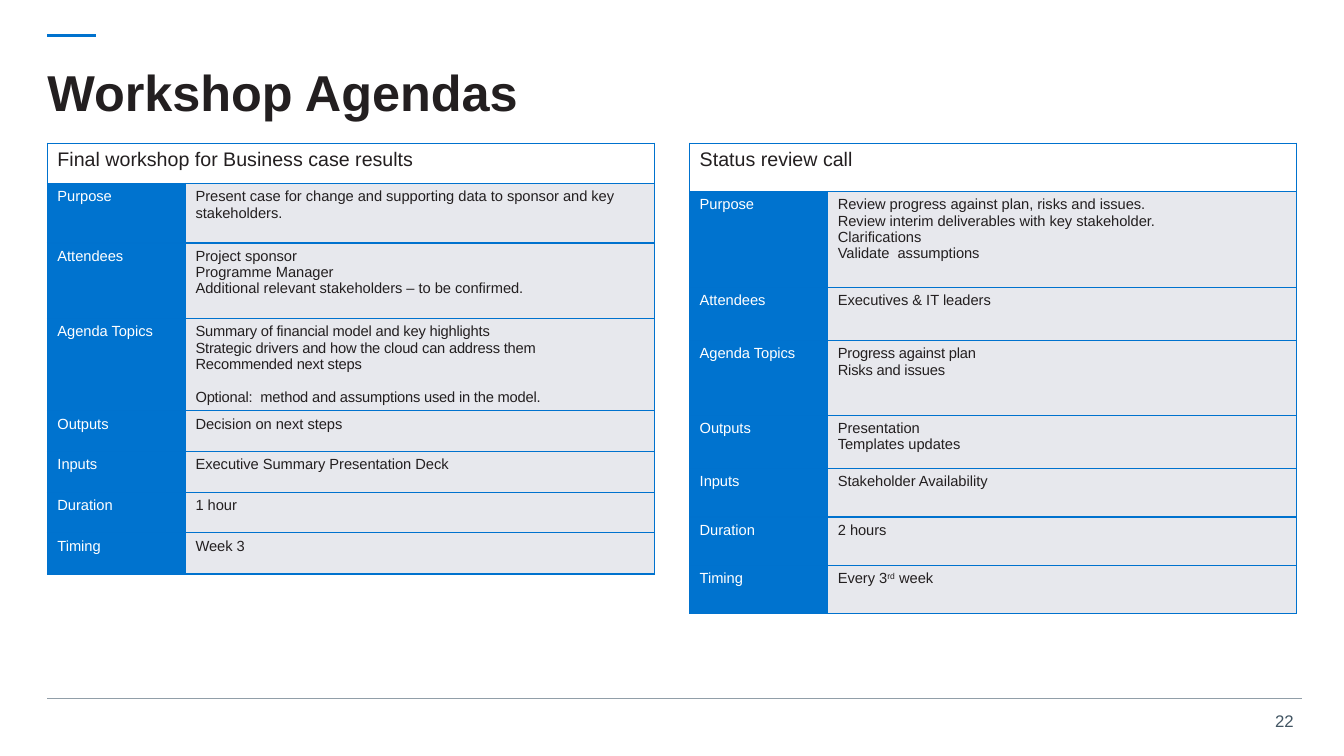
from lxml.etree import SubElement
from pptx import Presentation
from pptx.dml.color import RGBColor
from pptx.enum.shapes import MSO_CONNECTOR
from pptx.enum.text import MSO_ANCHOR, PP_ALIGN
from pptx.oxml import parse_xml
from pptx.oxml.ns import nsdecls, qn
from pptx.util import Inches, Pt

# Content: an empty line opens a gap, ^ encloses superscript
TITLE = "Workshop Agendas"
PAGE_NUMBER = "22"
TOPICS = ["Purpose", "Attendees", "Agenda Topics", "Outputs", "Inputs", "Duration", "Timing"]
AGENDAS = [
    {
        "heading": "Final workshop for Business case results",
        "details": [
            ["Present case for change and supporting data to sponsor and key stakeholders."],
            ["Project sponsor", "Programme Manager",
             "Additional relevant stakeholders – to be confirmed."],
            ["Summary of financial model and key highlights",
             "Strategic drivers and how the cloud can address them",
             "Recommended next steps", "",
             "Optional:  method and assumptions used in the model."],
            ["Decision on next steps"],
            ["Executive Summary Presentation Deck"],
            ["1 hour"],
            ["Week 3"],
        ],
        "rows": [0.4, 0.59, 0.75, 0.91, 0.4, 0.41, 0.4, 0.41],
    },
    {
        "heading": "Status review call",
        "details": [
            ["Review progress against plan, risks and issues.",
             "Review interim deliverables with key stakeholder.",
             "Clarifications", "Validate  assumptions"],
            ["Executives & IT leaders"],
            ["Progress against plan", "Risks and issues"],
            ["Presentation", "Templates updates"],
            ["Stakeholder Availability"],
            ["2 hours"],
            ["Every 3^rd^ week"],
        ],
        "rows": [0.48, 0.95, 0.53, 0.74, 0.53, 0.48, 0.48, 0.48],
    },
]

# Layout in inches
WIDTH, HEIGHT = 13.33, 7.5
MARGIN = 0.47
TABLE_TOP = 1.42
COLUMNS = [1.37, 4.65]
TABLE_GAP = 0.35

# Style
FONT = "Arial"
BLUE = RGBColor(0x00, 0x72, 0xCE)
LABEL_BLUE = RGBColor(0x00, 0x73, 0xCF)
PALE = RGBColor(0xE7, 0xE8, 0xED)
WHITE = RGBColor(0xFF, 0xFF, 0xFF)
INK = RGBColor(0x23, 0x1F, 0x20)
SLATE = RGBColor(0x42, 0x55, 0x63)
RULE_GREY = RGBColor(0x91, 0x9E, 0xA8)


def write(frame, lines, size=10.5, color=INK, bold=False, align=PP_ALIGN.LEFT,
          line_spacing=None, tracking=0):
    gap, first = 0, True
    for line in lines:
        if not line:
            gap = size * 1.15
            continue
        paragraph = frame.paragraphs[0] if first else frame.add_paragraph()
        paragraph.alignment = align
        paragraph.space_before = Pt(gap)
        if line_spacing:
            paragraph.line_spacing = line_spacing
        for index, part in enumerate(line.split("^")):
            run = paragraph.add_run()
            run.text = part
            font = run.font
            font.name, font.size, font.bold = FONT, Pt(size), bold
            font.color.rgb = color
            if tracking:
                font._element.set("spc", str(tracking))
            if index % 2:
                font._element.set("baseline", "30000")
        gap, first = 0, False


def add_rule(slide, left, right, y, color, weight):
    rule = slide.shapes.add_connector(
        MSO_CONNECTOR.STRAIGHT, Inches(left), Inches(y), Inches(right), Inches(y))
    rule.line.color.rgb = color
    rule.line.width = Pt(weight)
    SubElement(rule._element.spPr, qn("a:effectLst"))


def style_cell(cell, fill):
    cell.fill.solid()
    cell.fill.fore_color.rgb = fill
    properties = cell._tc.get_or_add_tcPr()
    for index, side in enumerate(("lnL", "lnR", "lnT", "lnB")):
        properties.insert(index, parse_xml(
            f'<a:{side} {nsdecls("a")} w="12700"><a:solidFill>'
            f'<a:srgbClr val="{BLUE}"/></a:solidFill></a:{side}>'))


def add_agenda(slide, agenda, left):
    rows = agenda["rows"]
    table = slide.shapes.add_table(
        len(rows), len(COLUMNS), Inches(left), Inches(TABLE_TOP),
        Inches(sum(COLUMNS)), Inches(sum(rows))).table
    table.first_row = table.horz_banding = False
    for column, width in zip(table.columns, COLUMNS):
        column.width = Inches(width)
    for row, height in zip(table.rows, rows):
        row.height = Inches(height)

    # Heading across both columns
    heading = table.cell(0, 0)
    heading.merge(table.cell(0, 1))
    for column in range(len(COLUMNS)):
        style_cell(table.cell(0, column), WHITE)
    write(heading.text_frame, [agenda["heading"]], size=14)

    # Topic and detail rows
    for row, (topic, details) in enumerate(zip(TOPICS, agenda["details"]), 1):
        label, detail = table.cell(row, 0), table.cell(row, 1)
        style_cell(label, LABEL_BLUE)
        style_cell(detail, PALE)
        write(label.text_frame, [topic], color=WHITE)
        write(detail.text_frame, details, tracking=-10 if topic == "Agenda Topics" else 0)


def main():
    presentation = Presentation()
    presentation.slide_width, presentation.slide_height = Inches(WIDTH), Inches(HEIGHT)
    slide = presentation.slides.add_slide(presentation.slide_layouts[5])

    # Title
    title = slide.shapes.title
    title.left, title.top = Inches(MARGIN), Inches(MARGIN)
    title.width, title.height = Inches(12.47), Inches(0.95)
    frame = title.text_frame
    frame.margin_left = frame.margin_right = frame.margin_top = frame.margin_bottom = 0
    frame.vertical_anchor = MSO_ANCHOR.MIDDLE
    write(frame, [TITLE], size=36, bold=True, line_spacing=0.9)

    # Accent and footer rules
    add_rule(slide, MARGIN, 0.95, 0.35, BLUE, 2)
    add_rule(slide, MARGIN, 12.91, 6.93, RULE_GREY, 0.75)

    # Agenda tables
    for index, agenda in enumerate(AGENDAS):
        add_agenda(slide, agenda, MARGIN + index * (sum(COLUMNS) + TABLE_GAP))

    # Page number
    number = slide.shapes.add_textbox(Inches(12.52), Inches(7), Inches(0.41), Inches(0.3))
    number.text_frame.word_wrap = True
    write(number.text_frame, [PAGE_NUMBER], size=12, color=SLATE, align=PP_ALIGN.RIGHT)

    presentation.save("out.pptx")


if __name__ == "__main__":
    main()
